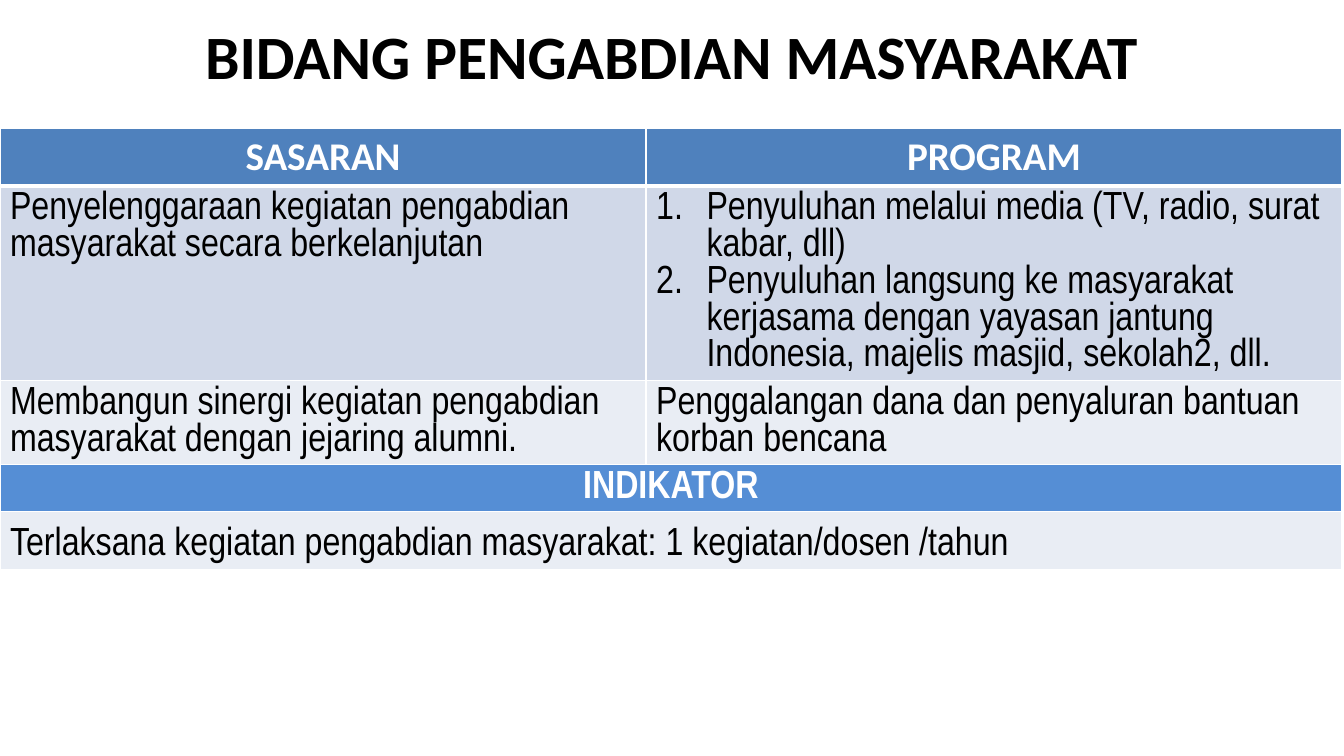
from dataclasses import dataclass
from lxml import etree
from pptx import Presentation
from pptx.dml.color import RGBColor
from pptx.enum import text
from pptx.oxml import ns
from pptx.util import Pt

TITLE = "BIDANG PENGABDIAN MASYARAKAT"
ROWS = [
    ("header", 41.4, [["SASARAN"], ["PROGRAM"]]),
    ("dark", 139.2, [
        ["Penyelenggaraan kegiatan pengabdian masyarakat secara berkelanjutan"],
        ["Penyuluhan melalui media (TV, radio, surat kabar, dll)",
         "Penyuluhan langsung ke masyarakat kerjasama dengan yayasan jantung "
         "Indonesia, majelis masjid, sekolah2, dll."],
    ]),
    ("light", 60, [
        ["Membangun sinergi kegiatan pengabdian masyarakat dengan jejaring alumni."],
        ["Penggalangan dana dan penyaluran bantuan korban bencana"],
    ]),
    ("band", 33.6, [["INDIKATOR"]]),
    ("result", 41.4, [["Terlaksana kegiatan pengabdian masyarakat: 1 kegiatan/dosen /tahun"]]),
]
COLUMN_WIDTHS = [461.5, 497]


@dataclass(frozen=True)
class Theme:
    black: str = "000000"
    white: str = "FFFFFF"
    blue: str = "4F81BD"
    bright_blue: str = "558ED5"
    dark: str = "D0D8E8"
    light: str = "E9EDF4"
    heading_font: str = "Calibri"
    body_font: str = "Arial Narrow"
    title_size: int = 44
    table_size: int = 28


THEME = Theme()
BODY = dict(font=THEME.body_font, color=THEME.black, bold=False, align=text.PP_ALIGN.LEFT, top=3.6)
HEADING = dict(BODY, color=THEME.white, bold=True, align=text.PP_ALIGN.CENTER)
STYLES = {
    "header": dict(HEADING, font=THEME.heading_font, fill=THEME.blue),
    "dark": dict(BODY, fill=THEME.dark),
    "light": dict(BODY, fill=THEME.light),
    "band": dict(HEADING, fill=THEME.bright_blue),
    "result": dict(BODY, fill=THEME.light, top=10.8),
}


def set_attributes(target, values):
    for name, value in values.items():
        setattr(target, name, value)


def format_paragraph(paragraph, style, size):
    paragraph.alignment = style["align"]
    for run in paragraph.runs:
        set_attributes(run.font, dict(name=style["font"], size=Pt(size), bold=style["bold"]))
        run.font.color.rgb = RGBColor.from_string(style["color"])


def number_paragraph(paragraph):
    properties = paragraph._p.get_or_add_pPr()
    properties.set("marL", str(Pt(36)))
    properties.set("indent", str(-Pt(36)))
    etree.SubElement(properties, ns.qn("a:buFont")).set("typeface", "+mj-lt")
    etree.SubElement(properties, ns.qn("a:buAutoNum")).set("type", "arabicPeriod")


def add_borders(cell, bottom_width):
    properties = cell._tc.get_or_add_tcPr()
    widths = {"a:lnL": 1, "a:lnR": 1, "a:lnT": 1, "a:lnB": bottom_width}
    for position, (tag, width) in enumerate(widths.items()):
        line = etree.Element(ns.qn(tag), w=str(Pt(width)))
        fill = etree.SubElement(line, ns.qn("a:solidFill"))
        etree.SubElement(fill, ns.qn("a:srgbClr")).set("val", THEME.white)
        properties.insert(position, line)


def fill_cell(cell, paragraphs, style):
    set_attributes(cell, dict(margin_left=Pt(7.2), margin_right=Pt(7.2),
                              margin_top=Pt(style["top"]), margin_bottom=Pt(3.6)))
    cell.text_frame.text = "\n".join(paragraphs)
    for paragraph in cell.text_frame.paragraphs:
        if len(paragraphs) > 1:
            number_paragraph(paragraph)
        format_paragraph(paragraph, style, THEME.table_size)


def add_title(slide):
    title = slide.shapes.title
    set_attributes(title, dict(left=Pt(48), top=Pt(16.56), width=Pt(864), height=Pt(44.64)))
    title.text_frame.text = TITLE
    set_attributes(title.text_frame, dict(vertical_anchor=text.MSO_ANCHOR.MIDDLE,
                                          auto_size=text.MSO_AUTO_SIZE.NONE, word_wrap=True))
    style = dict(HEADING, font=THEME.heading_font, color=THEME.black)
    format_paragraph(title.text_frame.paragraphs[0], style, THEME.title_size)


def add_program_table(slide):
    height = sum(row_height for _, row_height, _ in ROWS)
    table = slide.shapes.add_table(len(ROWS), len(COLUMN_WIDTHS), Pt(0), Pt(91.44),
                                   Pt(sum(COLUMN_WIDTHS)), Pt(height)).table
    for column, width in zip(table.columns, COLUMN_WIDTHS):
        column.width = Pt(width)
    for row_index, (kind, row_height, contents) in enumerate(ROWS):
        table.rows[row_index].height = Pt(row_height)
        cells = [table.cell(row_index, index) for index in range(len(COLUMN_WIDTHS))]
        if len(contents) == 1:
            cells[0].merge(cells[-1])
        for cell in cells:
            cell.fill.solid()
            cell.fill.fore_color.rgb = RGBColor.from_string(STYLES[kind]["fill"])
            add_borders(cell, 3 if kind == "header" else 1)
        for cell, paragraphs in zip(cells, contents):
            fill_cell(cell, paragraphs, STYLES[kind])


def main():
    presentation = Presentation()
    set_attributes(presentation, dict(slide_width=Pt(960), slide_height=Pt(540)))
    slide = presentation.slides.add_slide(presentation.slide_layouts[5])
    add_title(slide)
    add_program_table(slide)
    presentation.save("out.pptx")


if __name__ == "__main__":
    main()
